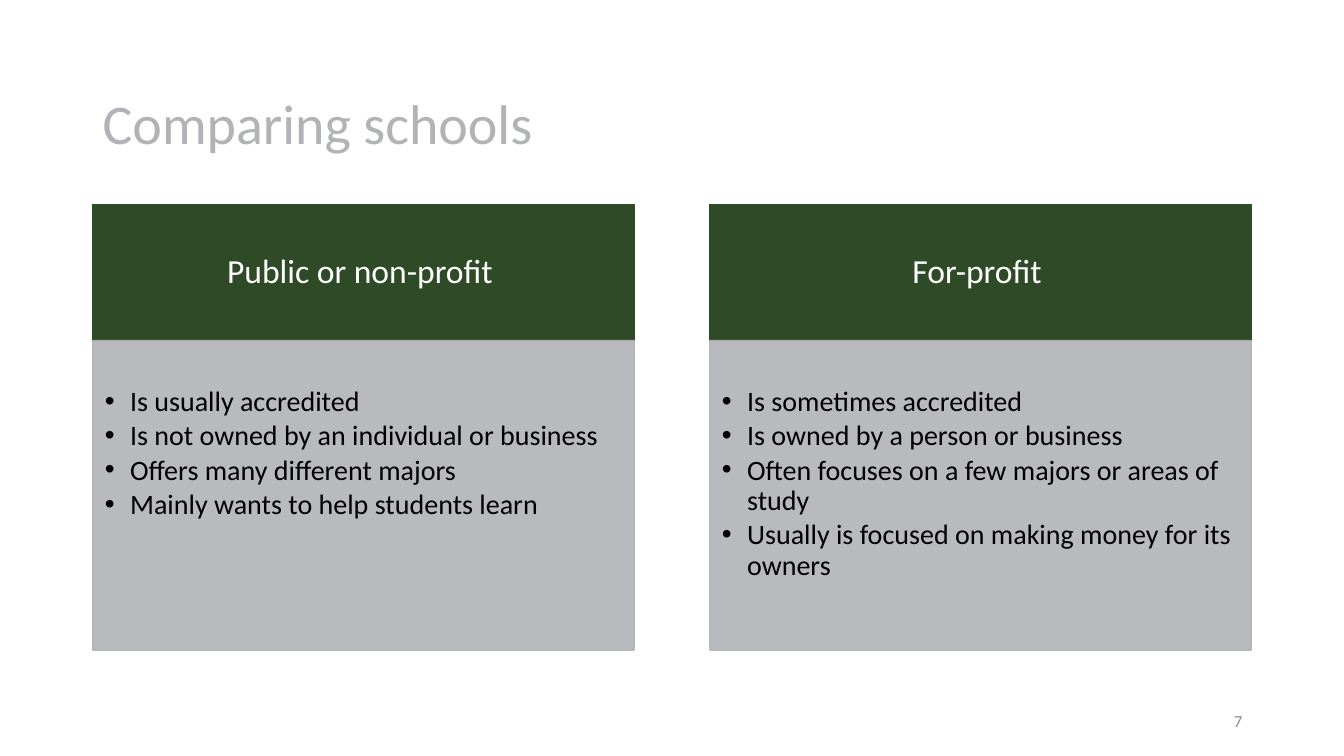
from lxml import etree
from pptx import Presentation
from pptx.dml.color import RGBColor
from pptx.enum.shapes import MSO_SHAPE
from pptx.enum.text import MSO_ANCHOR, PP_ALIGN
from pptx.oxml.ns import qn
from pptx.util import Inches, Pt

RECTANGLE = MSO_SHAPE.RECTANGLE
TOP, MIDDLE, BOTTOM = MSO_ANCHOR.TOP, MSO_ANCHOR.MIDDLE, MSO_ANCHOR.BOTTOM
LEFT, CENTER, RIGHT = PP_ALIGN.LEFT, PP_ALIGN.CENTER, PP_ALIGN.RIGHT

GREEN = RGBColor(0x2F, 0x4A, 0x26)
SILVER = RGBColor(0xB2, 0xB3, 0xB6)
GRAY = RGBColor(0x8C, 0x8C, 0x8C)
WHITE = RGBColor(0xFF, 0xFF, 0xFF)
BLACK = RGBColor(0x00, 0x00, 0x00)

MARGIN = 0.92
COLUMN_WIDTH = 5.37
COLUMN_STEP = 6.12
HEADER_TOP, HEADER_HEIGHT = 2.03, 1.35
BODY_HEIGHT = 3.07

SCHOOLS = [
    ("Public or non-profit", [
        "Is usually accredited",
        "Is not owned by an individual or business",
        "Offers many different majors",
        "Mainly wants to help students learn",
    ]),
    ("For-profit", [
        "Is sometimes accredited",
        "Is owned by a person or business",
        "Often focuses on a few majors or areas of study",
        "Usually is focused on making money for its owners",
    ]),
]


def write(holder, lines, size, color, align, anchor, spacing, insets=(0.1, 0.05, 0.1, 0.05)):
    frame = holder.text_frame
    frame_format = dict(zip(
        ("margin_left", "margin_top", "margin_right", "margin_bottom"), map(Inches, insets)))
    frame_format |= {"word_wrap": True, "vertical_anchor": anchor, "text": "\n".join(lines)}
    for name, value in frame_format.items():
        setattr(frame, name, value)
    for paragraph in frame.paragraphs:
        paragraph.alignment = align
        paragraph.line_spacing = spacing
        for name, value in {"name": "Calibri", "size": Pt(size)}.items():
            setattr(paragraph.font, name, value)
        paragraph.font.color.rgb = color
    return frame.paragraphs


def add_panel(left, top, height, color, opacity):
    panel = slide.shapes.add_shape(
        RECTANGLE, Inches(left), Inches(top), Inches(COLUMN_WIDTH), Inches(height))
    panel.shadow.inherit = False
    panel.line.width = Pt(1)
    for paint in (panel.fill, panel.line.fill):
        paint.solid()
        paint.fore_color.rgb = color
    if opacity < 100:
        for tone in panel._element.spPr.iter(qn("a:srgbClr")):
            etree.SubElement(tone, qn("a:alpha"), val=str(opacity * 1000))
    return panel


deck = Presentation()
deck.slide_width, deck.slide_height = Inches(13.33), Inches(7.5)
slide = deck.slides.add_slide(deck.slide_layouts[6])

title = slide.shapes.add_textbox(Inches(MARGIN), Inches(0.76), Inches(10.99), Inches(0.84))
write(title, ["Comparing schools"], 40, SILVER, LEFT, BOTTOM, 0.9)

for column, (school, traits) in enumerate(SCHOOLS):
    left = MARGIN + column * COLUMN_STEP
    header = add_panel(left, HEADER_TOP, HEADER_HEIGHT, GREEN, 100)
    write(header, [school], 24, WHITE, CENTER, MIDDLE, 0.9, (0.19, 0.11, 0.26, 0.11))

    body = add_panel(left, HEADER_TOP + HEADER_HEIGHT, BODY_HEIGHT, SILVER, 90)
    for trait in write(body, traits, 20, BLACK, LEFT, TOP, 0.9, (0.12, 0.46, 0.16, 0.17)):
        trait.space_after = Pt(3)
        properties = trait._p.get_or_add_pPr()
        properties.set("marL", str(Inches(0.25)))
        properties.set("indent", str(-Inches(0.25)))
        etree.SubElement(properties, qn("a:buFont"), typeface="Arial")
        etree.SubElement(properties, qn("a:buChar"), char="•")
        properties.append(properties.find(qn("a:defRPr")))

page_number = slide.shapes.add_textbox(Inches(9.42), Inches(6.95), Inches(3), Inches(0.4))
write(page_number, ["7"], 12, GRAY, RIGHT, MIDDLE, 1.0)

deck.save("out.pptx")
